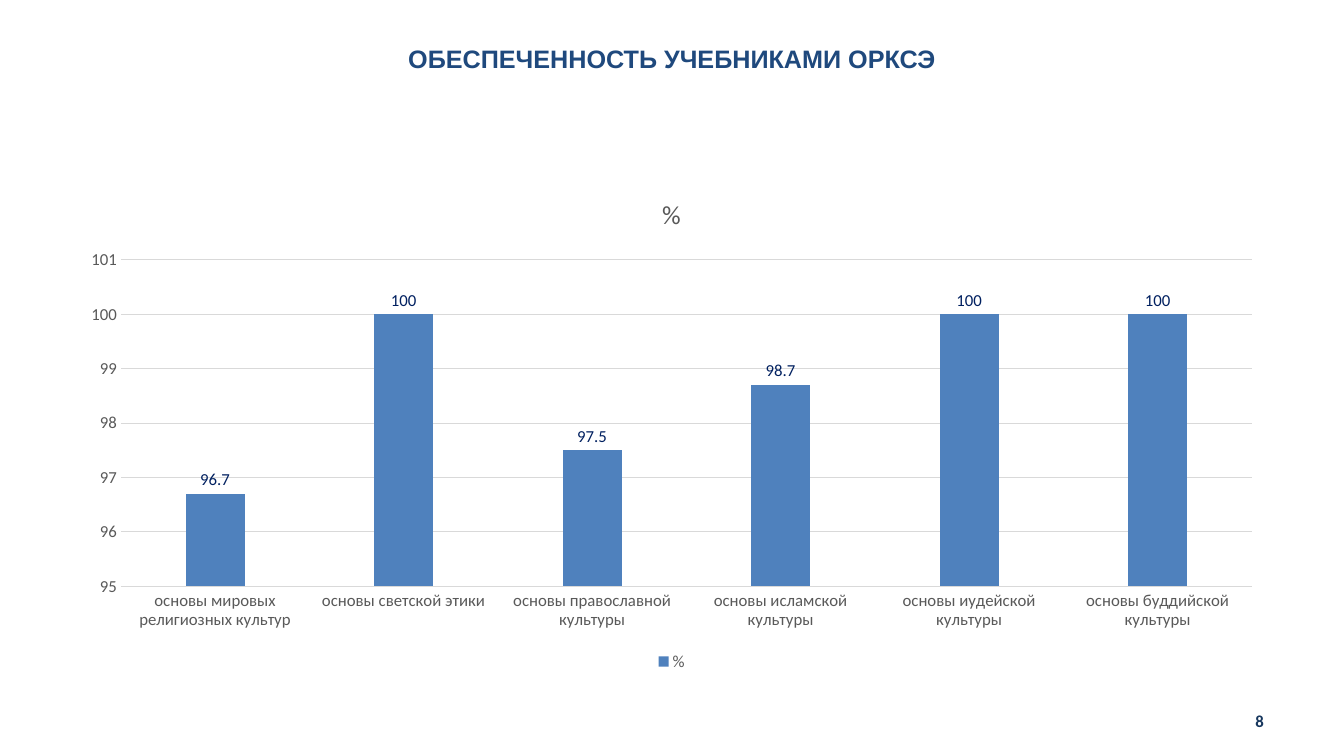
from pptx import Presentation
from pptx.chart.data import CategoryChartData
from pptx.dml.color import RGBColor
from pptx.enum.chart import (XL_CHART_TYPE, XL_LABEL_POSITION,
                             XL_LEGEND_POSITION, XL_TICK_MARK)
from pptx.enum.text import MSO_ANCHOR, PP_ALIGN
from pptx.util import Pt

COLORS = {"title": "1F497D", "bar": "4F81BD", "label": "002060",
          "text": "595959", "grid": "D9D9D9", "number": "17375E"}

BOOKS = {
    "основы мировых религиозных культур": 96.7,
    "основы светской этики": 100,
    "основы православной культуры": 97.5,
    "основы исламской культуры": 98.7,
    "основы иудейской культуры": 100,
    "основы буддийской культуры": 100,
}


class Deck:
    def __init__(self, width, height):
        self.prs = Presentation()
        self.prs.slide_width, self.prs.slide_height = Pt(width), Pt(height)
        self.slide = self.prs.slides.add_slide(self.prs.slide_layouts[5])

    def color(self, name):
        return RGBColor.from_string(COLORS[name])

    def style(self, font, size, color, bold=False, face="Calibri"):
        font.size, font.bold, font.name = Pt(size), bold, face
        font.color.rgb = self.color(color)

    def line(self, line, color):
        line.width = Pt(0.75)
        line.color.rgb = self.color(color)

    def fill(self, shape, text, align, inset, **look):
        frame = shape.text_frame
        frame.text = text
        frame.word_wrap = True
        frame.vertical_anchor = MSO_ANCHOR.MIDDLE
        frame.margin_left = frame.margin_right = Pt(2 * inset)
        frame.margin_top = frame.margin_bottom = Pt(inset)
        para = frame.paragraphs[0]
        para.alignment = align
        self.style(para.runs[0].font, bold=True, **look)

    def title(self, text, left, top, width, height):
        shape = self.slide.shapes.title
        shape.left, shape.top = Pt(left), Pt(top)
        shape.width, shape.height = Pt(width), Pt(height)
        self.fill(shape, text, PP_ALIGN.CENTER, 4.8,
                  size=18, color="title", face="Arial")

    def number(self, text, *box):
        shape = self.slide.shapes.add_textbox(*map(Pt, box))
        self.fill(shape, text, PP_ALIGN.RIGHT, 4.4, size=12, color="number")

    def axis(self, axis):
        axis.major_tick_mark = axis.minor_tick_mark = XL_TICK_MARK.NONE
        self.style(axis.tick_labels.font, 12, "text")

    def chart(self, name, values, low, high, *box):
        data = CategoryChartData()
        data.categories = list(values)
        data.add_series(name, list(values.values()))
        chart = self.slide.shapes.add_chart(
            XL_CHART_TYPE.COLUMN_CLUSTERED, *map(Pt, box), data).chart
        chart.font.name, chart.font.size = "Calibri", Pt(10)

        # Heading and legend
        chart.has_title = True
        head = chart.chart_title.text_frame
        head.text = name
        self.style(head.paragraphs[0].runs[0].font, 18.6, "text")
        chart.has_legend = True
        chart.legend.position = XL_LEGEND_POSITION.BOTTOM
        chart.legend.include_in_layout = False
        self.style(chart.legend.font, 12, "text")

        # Axes
        cats, vals = chart.category_axis, chart.value_axis
        self.axis(cats)
        self.line(cats.format.line, "grid")
        self.axis(vals)
        vals.format.line.fill.background()
        vals.minimum_scale, vals.maximum_scale, vals.major_unit = low, high, 1
        self.line(vals.major_gridlines.format.line, "grid")

        # Columns and their labels
        plot = chart.plots[0]
        plot.gap_width, plot.overlap = 219, -27
        plot.vary_by_categories = False
        bars = plot.series[0]
        bars.format.fill.solid()
        bars.format.fill.fore_color.rgb = self.color("bar")
        labels = bars.data_labels
        labels.show_value = True
        labels.position = XL_LABEL_POSITION.OUTSIDE_END
        self.style(labels.font, 12, "label")


def main():
    deck = Deck(960.5, 540)
    deck.title("ОБЕСПЕЧЕННОСТЬ УЧЕБНИКАМИ ОРКСЭ", 0, 26, 960.5, 32)
    deck.chart("%", BOOKS, 95, 101, 48, 126, 864, 356.5)
    deck.number("8", 688, 500.5, 224, 28.8)
    deck.prs.save("out.pptx")


if __name__ == "__main__":
    main()
